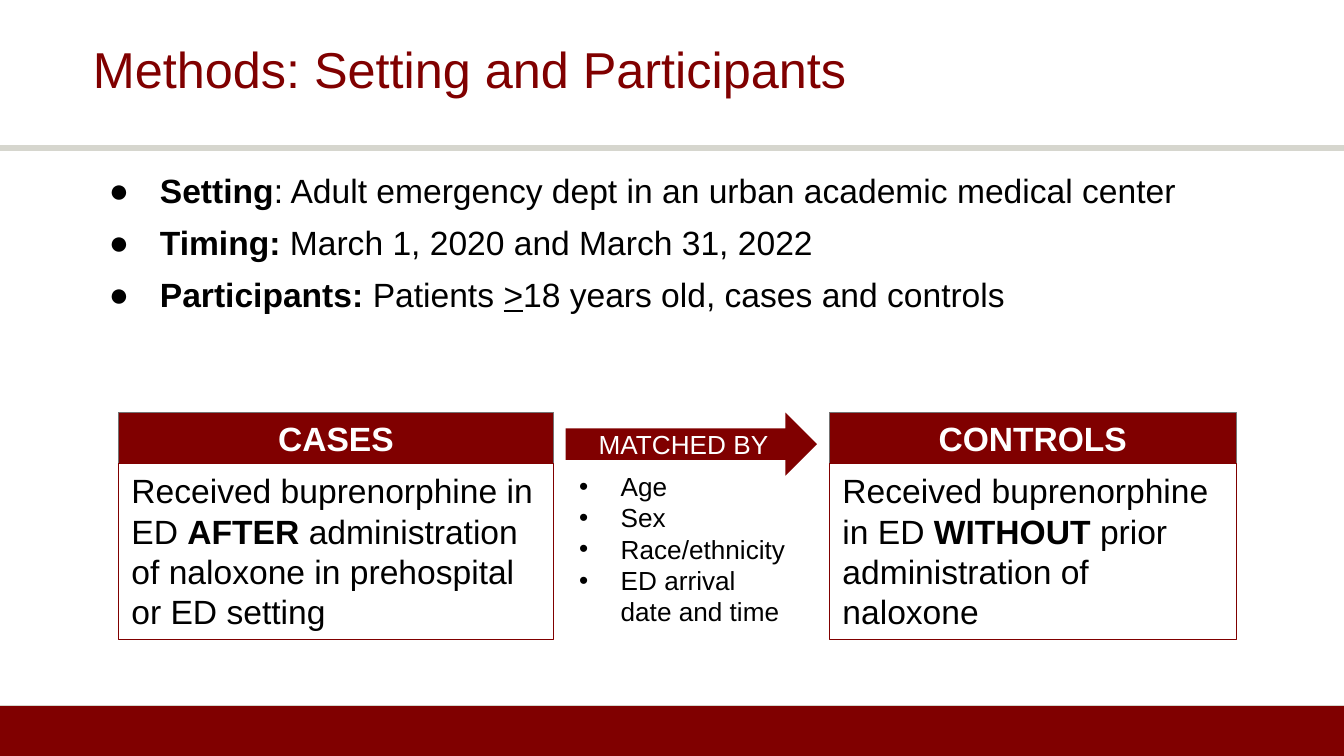
"""Build the study setting and participants slide."""
from dataclasses import dataclass

from lxml.etree import SubElement
from pptx import Presentation
from pptx.dml.color import RGBColor
from pptx.enum.shapes import MSO_CONNECTOR, MSO_SHAPE
from pptx.enum.text import MSO_ANCHOR, PP_ALIGN
from pptx.oxml.ns import qn
from pptx.util import Inches, Pt

MAROON = RGBColor(0x80, 0x00, 0x00)
SILVER = RGBColor(0xD6, 0xD6, 0xCE)
GRAY = RGBColor(0x73, 0x73, 0x73)
BLACK = RGBColor(0x00, 0x00, 0x00)
WHITE = RGBColor(0xFF, 0xFF, 0xFF)
FONT = "Arial"
WIDTH = 10
HEIGHT = WIDTH * 9 / 16
FOOTER_TOP = 5.25
GROUP_TOP, HEADER_H, BODY_TOP, BODY_H = 3.07, 0.38, 3.45, 1.31


@dataclass(frozen=True)
class Run:
    text: str
    bold: bool = False
    underline: bool = False


@dataclass(frozen=True)
class Group:
    left: float
    width: float
    heading: str
    runs: tuple[Run, ...]


FACTS = (
    (Run("Setting", bold=True),
     Run(": Adult emergency dept in an urban academic medical center")),
    (Run("Timing: ", bold=True), Run("March 1, 2020 and March 31, 2022")),
    (Run("Participants: ", bold=True), Run("Patients "),
     Run(">", underline=True), Run("18 years old, cases and controls")),
)
GROUPS = (
    Group(0.88, 3.24, "CASES", (
        Run("Received buprenorphine in ED "), Run("AFTER ", bold=True),
        Run("administration of naloxone in prehospital or ED setting"))),
    Group(6.17, 3.03, "CONTROLS", (
        Run("Received buprenorphine in ED "), Run("WITHOUT ", bold=True),
        Run("prior administration of naloxone"))),
)
MATCH_FACTORS = ("Age", "Sex", "Race/ethnicity", "ED arrival date and time")


def add_runs(p, runs: tuple[Run, ...], size: float, color: RGBColor) -> None:
    for run in runs:
        r = p.add_run()
        r.text = run.text
        r.font.name = FONT
        r.font.size = Pt(size)
        r.font.color.rgb = color
        r.font.bold = run.bold
        r.font.underline = run.underline


def add_bullet(p, char: str, margin: float, hanging: float) -> None:
    pPr = p._p.get_or_add_pPr()
    pPr.set("marL", str(Inches(margin)))
    pPr.set("indent", str(-Inches(hanging)))
    color = SubElement(pPr, qn("a:buClr"))
    SubElement(color, qn("a:srgbClr"), val=str(BLACK))
    SubElement(pPr, qn("a:buFont"), typeface=FONT)
    SubElement(pPr, qn("a:buChar"), char=char)


def add_rule(s, y: float, width: float) -> None:
    line = s.shapes.add_connector(
        MSO_CONNECTOR.STRAIGHT, 0, Inches(y), Inches(WIDTH), Inches(y))
    line.line.color.rgb = SILVER
    line.line.width = Pt(width)
    SubElement(line._element.spPr, qn("a:effectLst"))


def add_block(s, kind: MSO_SHAPE, left: float, top: float, width: float, height: float,
              fill: RGBColor | None = MAROON, outline: RGBColor | None = None):
    sp = s.shapes.add_shape(
        kind, Inches(left), Inches(top), Inches(width), Inches(height))
    sp.shadow.inherit = False
    if fill is None:
        sp.fill.background()
    else:
        sp.fill.solid()
        sp.fill.fore_color.rgb = fill
    if outline is None:
        sp.line.fill.background()
    else:
        sp.line.color.rgb = outline
        sp.line.width = Pt(0.75)
    return sp


def add_text_frame(s, left: float, top: float, width: float, height: float):
    sp = s.shapes.add_textbox(Inches(left), Inches(top), Inches(width), Inches(height))
    tf = sp.text_frame
    tf.word_wrap = True
    return tf


def add_placed_text(s, top: float, width: float, height: float):
    tf = add_text_frame(s, 0.69, top, width, height)
    tf.margin_left = tf.margin_right = 0
    tf.margin_top = tf.margin_bottom = Inches(0.04)
    return tf


def next_paragraph(tf, index: int):
    return tf.add_paragraph() if index else tf.paragraphs[0]


def add_title(s, title: str) -> None:
    tf = add_placed_text(s, 0, 8.62, 1.08)
    tf.vertical_anchor = MSO_ANCHOR.MIDDLE
    p = tf.paragraphs[0]
    p.line_spacing = 0.9
    add_runs(p, (Run(title),), 27, MAROON)


def add_facts(s) -> None:
    tf = add_placed_text(s, 1.26, 8.87, 1.4)
    for i, runs in enumerate(FACTS):
        p = next_paragraph(tf, i)
        add_bullet(p, "●", 0.5, 0.38)
        p.line_spacing = 0.9
        if i:
            p.space_before = Pt(8.3)
        add_runs(p, runs, 18, BLACK)


def add_label(sp, text: str, size: float, bold: bool) -> None:
    tf = sp.text_frame
    tf.vertical_anchor = MSO_ANCHOR.MIDDLE
    p = tf.paragraphs[0]
    p.alignment = PP_ALIGN.CENTER
    add_runs(p, (Run(text, bold),), size, WHITE)


def add_group(s, group: Group) -> None:
    header = add_block(s, MSO_SHAPE.RECTANGLE, group.left, GROUP_TOP,
                       group.width, HEADER_H, outline=GRAY)
    tf = header.text_frame
    tf.margin_top = tf.margin_bottom = Inches(0.1)
    add_label(header, group.heading, 18, True)

    body = add_block(s, MSO_SHAPE.RECTANGLE, group.left, BODY_TOP,
                     group.width, BODY_H, fill=None, outline=MAROON)
    tf = body.text_frame
    tf.vertical_anchor = MSO_ANCHOR.TOP
    p = tf.paragraphs[0]
    p.alignment = PP_ALIGN.LEFT
    add_runs(p, group.runs, 18, BLACK)


def add_matching(s) -> None:
    arrow = add_block(s, MSO_SHAPE.RIGHT_ARROW, 4.21, GROUP_TOP, 1.87, 0.47)
    add_label(arrow, "MATCHED BY", 14, False)
    tf = add_text_frame(s, 4.21, BODY_TOP, 1.78, 1.28)
    for i, factor in enumerate(MATCH_FACTORS):
        p = next_paragraph(tf, i)
        add_bullet(p, "•", 0.31, 0.31)
        add_runs(p, (Run(factor),), 14, BLACK)


def main() -> None:
    prs = Presentation()
    prs.slide_width, prs.slide_height = Inches(WIDTH), Inches(HEIGHT)
    s = prs.slides.add_slide(prs.slide_layouts[6])
    add_rule(s, 1.1, 3)
    add_block(s, MSO_SHAPE.RECTANGLE, 0, FOOTER_TOP, WIDTH, HEIGHT - FOOTER_TOP)
    add_rule(s, FOOTER_TOP, 0.75)
    add_facts(s)
    add_title(s, "Methods: Setting and Participants")
    for group in GROUPS:
        add_group(s, group)
    add_matching(s)
    prs.save("out.pptx")


if __name__ == "__main__":
    main()
